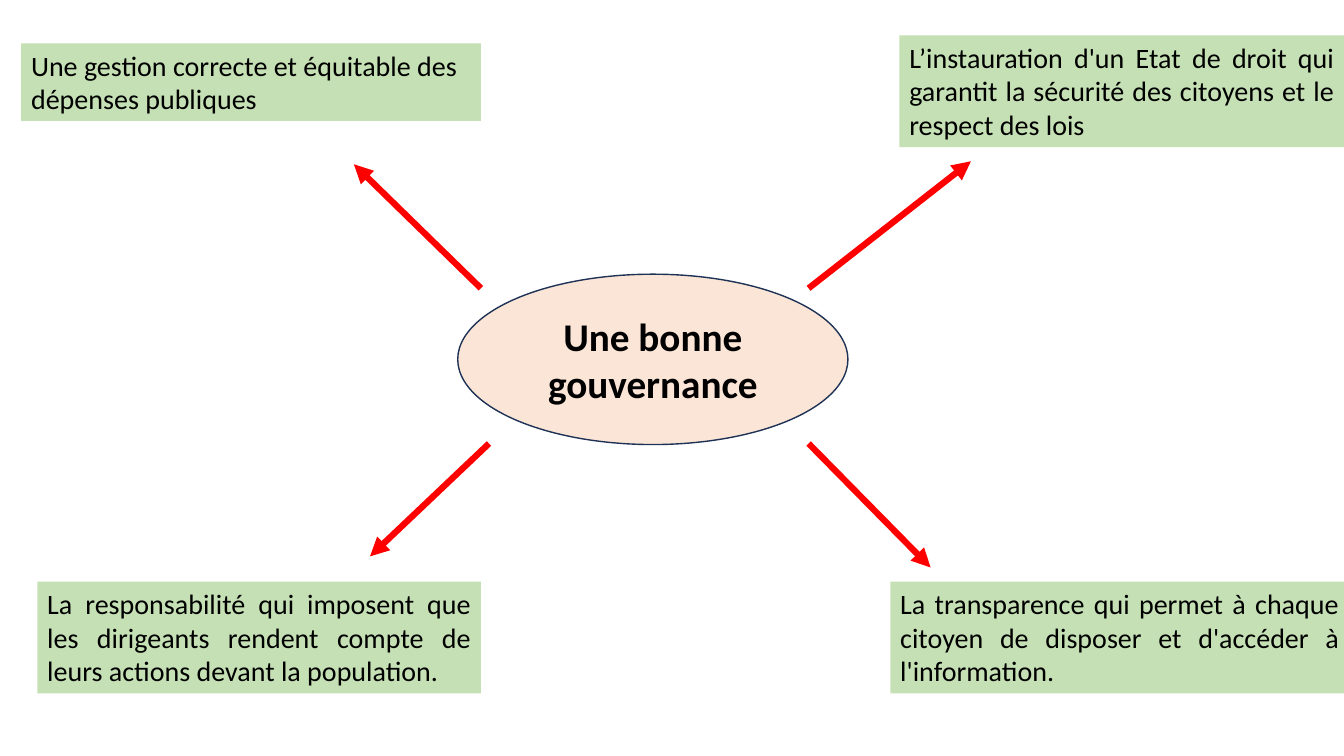
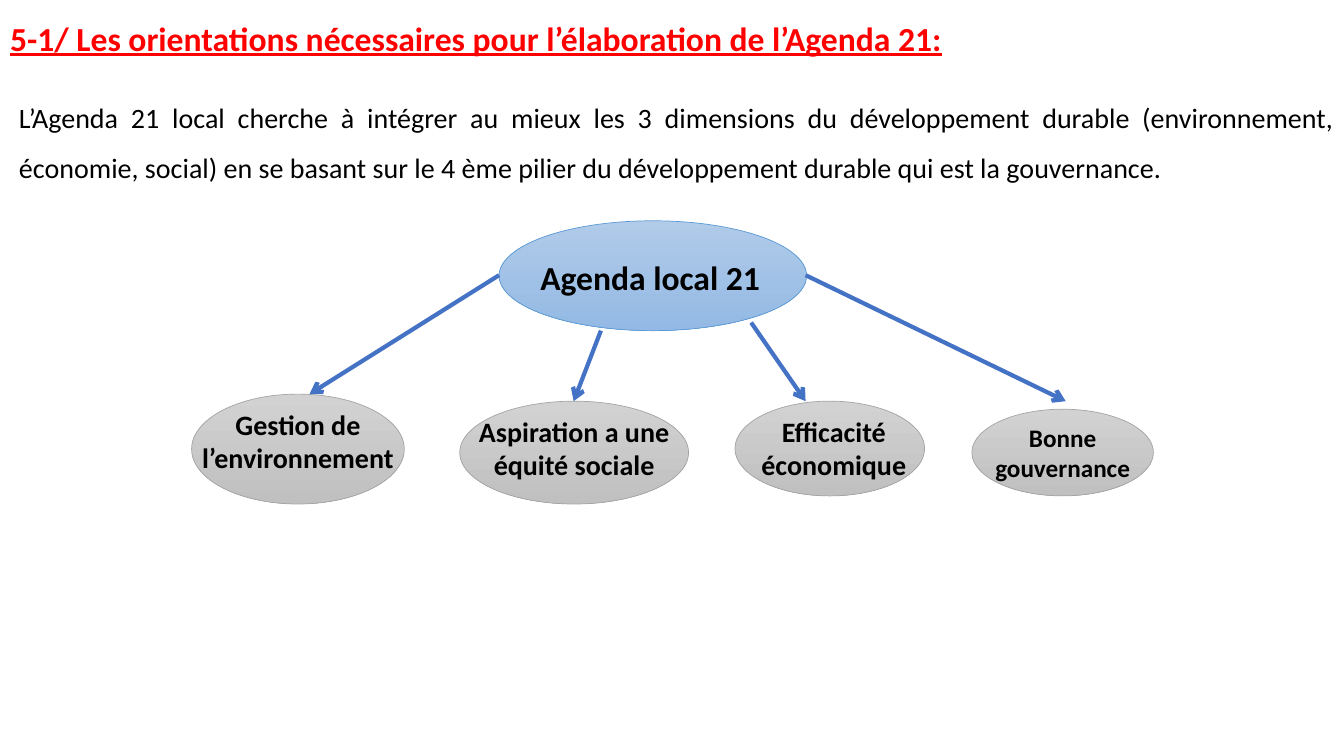
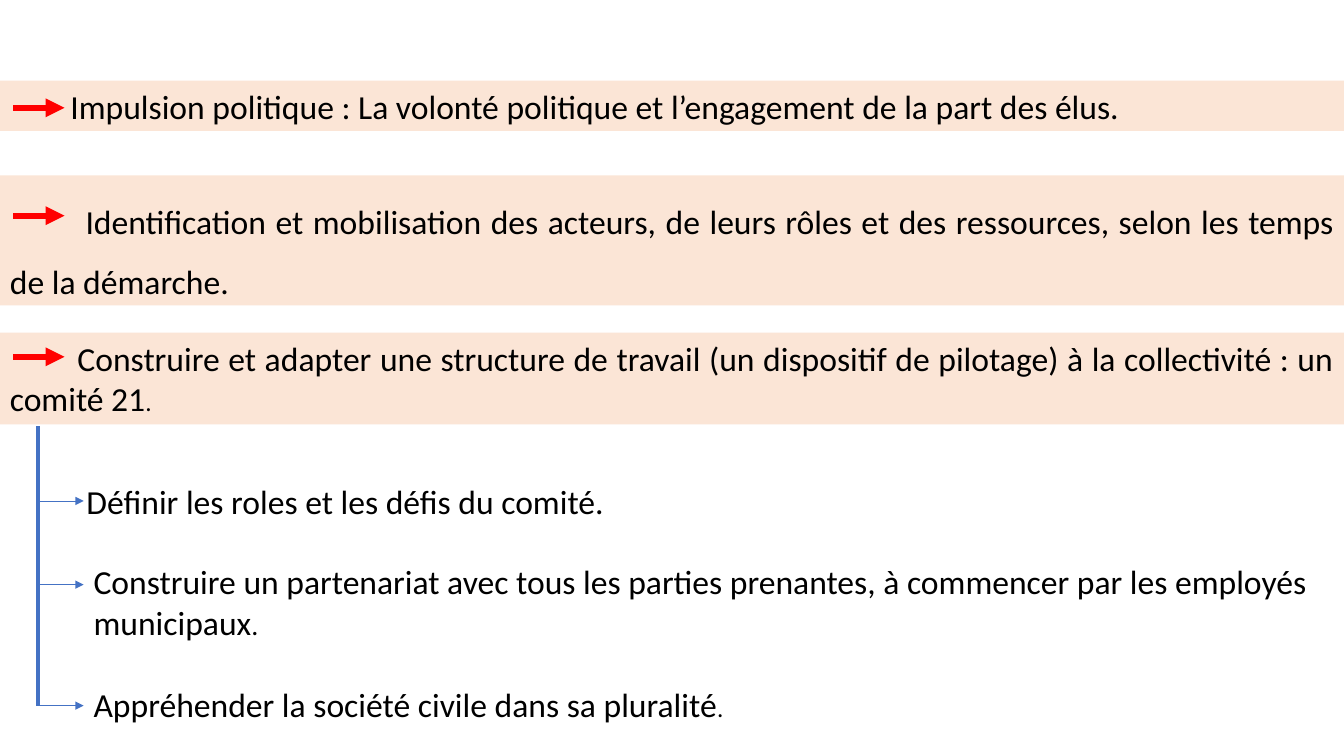
from dataclasses import dataclass

from lxml import etree
from pptx import Presentation
from pptx.dml.color import RGBColor
from pptx.enum.shapes import MSO_CONNECTOR, MSO_SHAPE
from pptx.enum.text import MSO_ANCHOR, MSO_AUTO_SIZE, PP_ALIGN
from pptx.oxml.ns import qn
from pptx.util import Inches, Pt

LEFT, CENTER, JUSTIFY = PP_ALIGN.LEFT, PP_ALIGN.CENTER, PP_ALIGN.JUSTIFY
TOP, MIDDLE, BOTTOM = MSO_ANCHOR.TOP, MSO_ANCHOR.MIDDLE, MSO_ANCHOR.BOTTOM
NO_FIT = MSO_AUTO_SIZE.NONE
OVAL, STRAIGHT = MSO_SHAPE.OVAL, MSO_CONNECTOR.STRAIGHT
W, H = 13.33, 7.5
TITLE_ONLY, BLANK = 5, 6


@dataclass(frozen=True)
class Theme:
    font: str = "Calibri"
    black: str = "000000"
    red: str = "FF0000"
    blue: str = "4472C4"
    green: str = "C5E0B4"
    peach: str = "FBE5D6"
    navy: str = "1E3256"
    sky: tuple = ("B1CBE9", "93B9E4", "5B9BD5")   # top, bottom, outline
    grey: tuple = ("D2D2D2", "C0C0C0", "A5A5A5")
    hub: int = 28
    head: int = 24
    body: int = 20
    small: int = 18
    thick: float = 4.5
    medium: float = 3
    thin: float = 0.5


T = Theme()

# ---- Content ----
HUB = ("Une bonne gouvernance", (4.54, 2.72, 3.87, 1.69))
# text, box, alignment, arrow start, arrow end
PILLARS = [
    ("L’instauration d'un Etat de droit qui garantit la sécurité des citoyens et le respect des lois",
     (8.92, 0.35, 4.41, 1.11), JUSTIFY, (8.02, 2.86), (9.63, 1.6)),
    ("Une gestion correcte et équitable des dépenses publiques",
     (0.21, 0.43, 4.56, 0.77), LEFT, (4.77, 2.86), (3.51, 1.63)),
    ("La responsabilité qui imposent que les dirigeants rendent compte de leurs actions devant la population.",
     (0.37, 5.77, 4.4, 1.11), JUSTIFY, (4.85, 4.4), (3.67, 5.52)),
    ("La transparence qui permet à chaque citoyen de disposer et d'accéder à l'information.",
     (8.83, 5.77, 4.55, 1.11), JUSTIFY, (8.02, 4.4), (9.23, 5.63)),
]

TITLE = "5-1/ Les orientations nécessaires pour l’élaboration de l’Agenda 21:"
INTRO = ("L’Agenda 21 local cherche à intégrer au mieux les 3 dimensions du développement durable "
         "(environnement, économie, social) en se basant sur le 4 ème pilier du développement durable "
         "qui est la gouvernance.")
ROOT = ("Agenda local 21", (4.95, 2.19, 3.05, 1.09))
# text, ellipse, label shift, size, arrow start, arrow end
BRANCHES = [
    ("Gestion de l’environnement", (1.9, 3.91, 2.11, 1.09), 0, T.body, (4.95, 2.73), (3.07, 3.91)),
    ("Aspiration a une équité sociale", (4.56, 3.98, 2.27, 1.02), 0, T.body, (5.96, 3.28), (5.69, 3.98)),
    ("Efficacité économique", (7.29, 3.98, 1.88, 0.94), 0.04, T.body, (7.45, 3.2), (7.99, 3.98)),
    ("Bonne gouvernance", (9.64, 4.06, 1.8, 0.86), 0, T.small, (7.99, 2.73), (10.57, 3.98)),
]

# runs, top, height, first-line indent, arrow height, alignment, line spacing, space before
BANDS = [
    ([("Impulsion politique : La volonté politique et l’engagement de la part des élus.", T.head)],
     0.8, 0.5, 0.6, 1.07, LEFT, 1, 0),
    ([("Identification et mobilisation des acteurs, de leurs rôles et des ressources, "
       "selon les temps de la démarche.", T.head)],
     1.74, 1.29, 0.75, 2.14, JUSTIFY, 1.5, 10),
    ([("Construire et adapter une structure de travail (un dispositif de pilotage) "
       "à la collectivité : un comité 21", T.head), (".", T.small)],
     3.3, 0.91, 0.67, 3.54, JUSTIFY, 1, 0),
]
TRUNK = (0.38, 4.23, 7)   # x, top, bottom
# runs, box, arrow height
STEPS = [
    ([("Définir les roles et les défis du comité.", T.head)], (0.76, 4.72, 11.07, 0.5), 4.97),
    ([("Construire un partenariat avec tous les parties prenantes, à commencer par les employés "
       "municipaux", T.head), (".", T.body)], (0.83, 5.52, 12.33, 0.91), 5.8),
    ([("Appréhender la société civile dans sa pluralité", T.head), (".", T.small)],
     (0.83, 6.74, 10.1, 0.5), 7),
]


# ---- Helpers ----
def rgb(color):
    return RGBColor.from_string(color)


def inches(values):
    return [Inches(v) for v in values]


def write(sp, runs, align=LEFT, anchor=TOP, color=T.black, bold=False, underline=False,
          spacing=1, before=0, indent=0, inset=0.1):
    tf = sp.text_frame
    tf.word_wrap, tf.auto_size, tf.vertical_anchor = True, NO_FIT, anchor
    tf.margin_left = tf.margin_right = Inches(inset)
    p = tf.paragraphs[0]
    p.alignment, p.line_spacing, p.space_before = align, spacing, Pt(before)
    if indent:
        p._p.get_or_add_pPr().set("indent", str(Inches(indent)))
    for text, size in runs:
        r = p.add_run()
        r.text = text
        f = r.font
        f.name, f.size, f.bold, f.underline = T.font, Pt(size), bold, underline
        f.color.rgb = rgb(color)


def text_box(s, box, runs, fill=None, **style):
    sp = s.shapes.add_textbox(*inches(box))
    if fill:
        sp.fill.solid()
        sp.fill.fore_color.rgb = rgb(fill)
    write(sp, runs, **style)


def ellipse(s, box, fill, line, width):
    """A pair of fill colours gives a gradient from top to bottom."""
    sp = s.shapes.add_shape(OVAL, *inches(box))
    sp.shadow.inherit = False
    if isinstance(fill, str):
        sp.fill.solid()
        sp.fill.fore_color.rgb = rgb(fill)
    else:
        sp.fill.gradient()
        sp.fill.gradient_angle = 270
        for stop, color in zip(sp.fill.gradient_stops, fill):
            stop.color.rgb = rgb(color)
    sp.line.color.rgb = rgb(line)
    sp.line.width = Pt(width)
    return sp


def line(s, start, end, color, width, head=None):
    cx = s.shapes.add_connector(STRAIGHT, *inches(start + end))
    cx.line.color.rgb = rgb(color)
    cx.line.width = Pt(width)
    if head:
        etree.SubElement(cx.line._get_or_add_ln(), qn("a:tailEnd"), type=head)
    etree.SubElement(cx._element.spPr, qn("a:effectLst"))


# ---- Slides ----
def governance_slide(prs):
    s = prs.slides.add_slide(prs.slide_layouts[BLANK])
    text, box = HUB
    sp = ellipse(s, box, T.peach, T.navy, 1)
    write(sp, [(text, T.hub)], align=CENTER, anchor=MIDDLE, bold=True)
    for text, box, align, start, end in PILLARS:
        line(s, start, end, T.red, T.thick, "triangle")
        text_box(s, box, [(text, T.body)], fill=T.green, align=align)


def agenda_slide(prs):
    s = prs.slides.add_slide(prs.slide_layouts[TITLE_ONLY])
    title = s.shapes.title
    title.left, title.top, title.width, title.height = inches((0, 0, 10, 0.63))
    write(title, [(TITLE, T.head)], anchor=BOTTOM, color=T.red, bold=True, underline=True, spacing=0.9)
    text_box(s, (0.09, 0.78, W - 0.09, 1.3), [(INTRO, T.body)], align=JUSTIFY, spacing=1.5, before=10)

    text, box = ROOT
    ellipse(s, box, T.sky[:2], T.sky[2], T.thin)
    text_box(s, (5.26, 2.5, 2.58, 0.5), [(text, T.head)], bold=True)
    for text, box, shift, size, start, end in BRANCHES:
        x, y, w, h = box
        ellipse(s, box, T.grey[:2], T.grey[2], T.thin)
        text_box(s, (x + shift, y + 0.08, w, 0.77), [(text, size)], align=CENTER, bold=True, inset=0.05)
        line(s, start, end, T.blue, T.medium, "arrow")


def steps_slide(prs):
    s = prs.slides.add_slide(prs.slide_layouts[BLANK])
    for runs, top, height, indent, y, align, spacing, before in BANDS:
        text_box(s, (0, top, W, height), runs, fill=T.peach, align=align,
                 spacing=spacing, before=before, indent=indent)
        line(s, (0.13, y), (0.64, y), T.red, T.thick, "triangle")
    x, top, bottom = TRUNK
    line(s, (x, top), (x, bottom), T.blue, T.medium)
    for runs, box, y in STEPS:
        line(s, (x, y), (x + 0.45, y), T.blue, T.thin, "triangle")
        text_box(s, box, runs)


def main():
    prs = Presentation()
    prs.slide_width, prs.slide_height = inches((W, H))
    governance_slide(prs)
    agenda_slide(prs)
    steps_slide(prs)
    prs.save("out.pptx")


if __name__ == "__main__":
    main()
